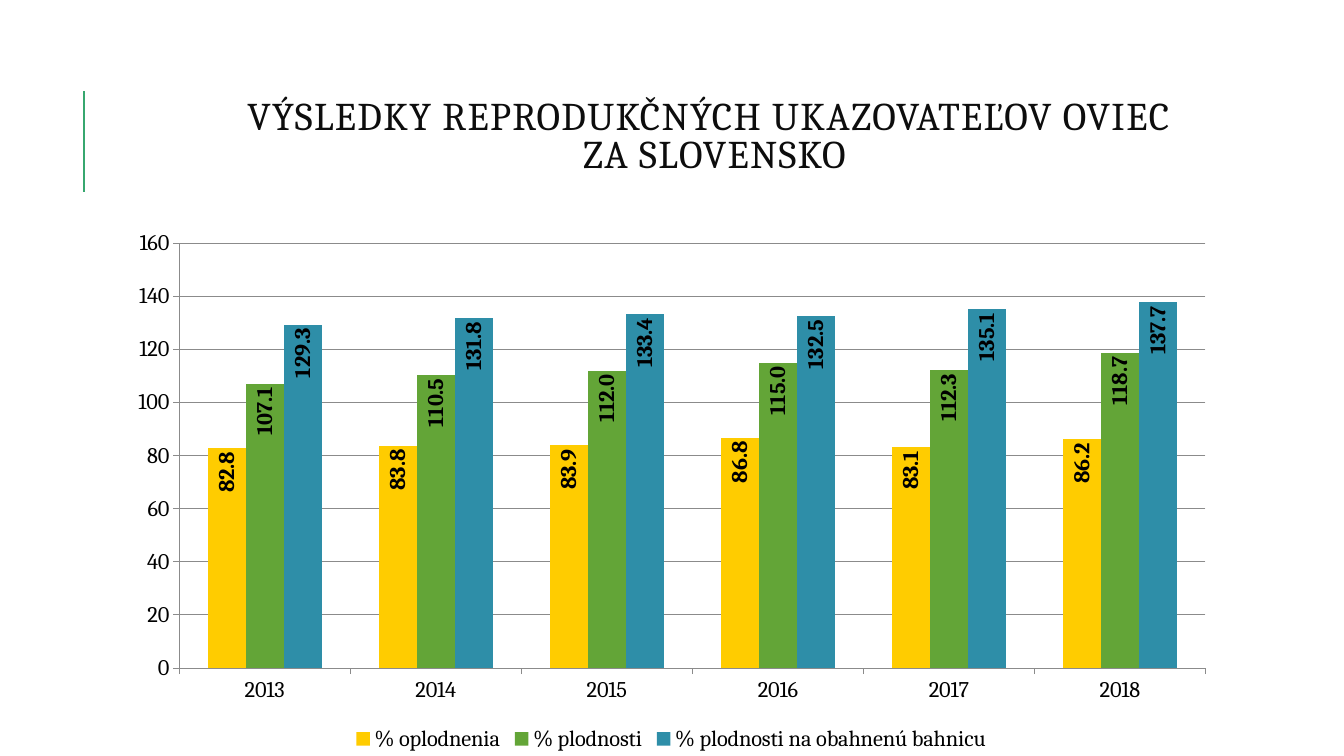
from lxml import etree
from pptx import Presentation
from pptx import util as u
from pptx.chart import data as chart_data
from pptx.dml.color import RGBColor
from pptx.enum import chart as ch, shapes, text
from pptx.oxml import parse_xml
from pptx.oxml.ns import nsdecls, qn

Pt = u.Pt

# Colours
ACCENT = RGBColor(0x37, 0xA7, 0x6F)
TITLE = RGBColor(0x0D, 0x0D, 0x0D)
BLACK = RGBColor(0, 0, 0)
GRID = RGBColor(0x8B, 0x8B, 0x8B)
YELLOW = RGBColor(0xFF, 0xCC, 0x00)
GREEN = RGBColor(0x63, 0xA5, 0x37)
BLUE = RGBColor(0x2E, 0x8E, 0xA8)

# Chart content
YEARS = ["2013", "2014", "2015", "2016", "2017", "2018"]
INDICATORS = [
    ("% oplodnenia", YELLOW, (82.8, 83.8, 83.9, 86.8, 83.1, 86.2)),
    ("% plodnosti", GREEN, (107.1, 110.5, 112.0, 115.0, 112.3, 118.7)),
    ("% plodnosti na obahnenú bahnicu", BLUE,
     (129.3, 131.8, 133.4, 132.5, 135.1, 137.7)),
]
PLOT_AREA = {"x": 0.057, "y": 0.042, "w": 0.924, "h": 0.794}


def write(frame, content, *, font, size, color, spacing=0, line_spacing=1.0,
          align=text.PP_ALIGN.LEFT):
    """Fill a text frame with one paragraph; a vertical tab breaks the line."""
    paragraph = frame.paragraphs[0]
    paragraph.text = content
    paragraph.alignment = align
    paragraph.line_spacing = line_spacing
    for run in paragraph.runs:
        run.font.name, run.font.size = font, Pt(size)
        run.font.color.rgb = color
        run.font._element.set("spc", str(int(spacing * 100)))


class ReproductionSlide:
    font = "Cambria"

    def __init__(self, slide):
        self.slide = slide

    def rule(self, x1, y1, x2, y2):
        rule = self.slide.shapes.add_connector(
            shapes.MSO_CONNECTOR.STRAIGHT, Pt(x1), Pt(y1), Pt(x2), Pt(y2))
        rule.line.color.rgb = ACCENT
        rule.line.width = Pt(1.5)
        etree.SubElement(rule._element.spPr, qn("a:effectLst"))

    def title(self, content, left, top, width, height):
        box = self.slide.shapes.add_textbox(
            Pt(left), Pt(top), Pt(width), Pt(height))
        frame = box.text_frame
        frame.word_wrap = True
        frame.vertical_anchor = text.MSO_ANCHOR.MIDDLE
        write(frame, content, font=self.font, size=28, color=TITLE, spacing=1,
              line_spacing=0.8, align=text.PP_ALIGN.CENTER)

    def columns(self, left, top, width, height):
        table = chart_data.CategoryChartData(number_format="0.0")
        table.categories = YEARS
        for name, _, values in INDICATORS:
            table.add_series(name, values)
        chart = self.slide.shapes.add_chart(
            ch.XL_CHART_TYPE.COLUMN_CLUSTERED,
            Pt(left), Pt(top), Pt(width), Pt(height), table).chart
        chart.has_title = False
        self.style(chart.font)

        # Legend and plot area
        chart.has_legend = True
        chart.legend.position = ch.XL_LEGEND_POSITION.BOTTOM
        chart.legend.include_in_layout = False
        self.place_plot(chart)

        # Axes
        years, percent = chart.category_axis, chart.value_axis
        for axis in (years, percent):
            axis.major_tick_mark = ch.XL_TICK_MARK.OUTSIDE
            axis.minor_tick_mark = ch.XL_TICK_MARK.NONE
            axis.format.line.color.rgb = GRID
        percent.minimum_scale, percent.maximum_scale = 0, 160
        percent.major_unit = 20
        percent.tick_labels.number_format = "0"
        percent.tick_labels.number_format_is_linked = False
        percent.major_gridlines.format.line.color.rgb = GRID

        # Series with upright labels
        plot = chart.plots[0]
        plot.vary_by_categories = False
        plot.gap_width, plot.overlap = 150, 0
        for series, (_, color, _) in zip(plot.series, INDICATORS):
            series.format.fill.solid()
            series.format.fill.fore_color.rgb = color
            series.invert_if_negative = False
            self.label(series.data_labels)

    def style(self, font, bold=False):
        font.name, font.size, font.bold = self.font, Pt(16), bold
        font.color.rgb = BLACK

    def label(self, labels):
        self.style(labels.font, bold=True)
        labels.show_value = True
        labels.number_format = "0.0"
        labels.number_format_is_linked = False
        labels.position = ch.XL_LABEL_POSITION.INSIDE_END
        body = labels._element.find(qn("c:txPr")).find(qn("a:bodyPr"))
        body.set("rot", "-5400000")
        body.set("vert", "horz")

    def place_plot(self, chart):
        area = chart._chartSpace.chart.plotArea
        for layout in area.findall(qn("c:layout")):
            area.remove(layout)
        modes = '<c:xMode val="edge"/><c:yMode val="edge"/>'
        sizes = "".join(f'<c:{k} val="{v}"/>' for k, v in PLOT_AREA.items())
        area.insert(0, parse_xml(
            f'<c:layout {nsdecls("c")}><c:manualLayout>'
            f'<c:layoutTarget val="inner"/>{modes}{sizes}'
            '</c:manualLayout></c:layout>'))


def main():
    deck = Presentation()
    deck.slide_width, deck.slide_height = Pt(960), Pt(540)
    page = ReproductionSlide(deck.slides.add_slide(deck.slide_layouts[6]))
    page.rule(60, 137, 60, 65)
    page.title("VÝSLEDKY REPRODUKČNÝCH UKAZOVATEĽOV OVIEC \vZA SLOVENSKO",
               80.6, 62.6, 859.7, 72)
    page.columns(82.8, 157.7, 793.4, 382.3)
    deck.save("out.pptx")


if __name__ == "__main__":
    main()
